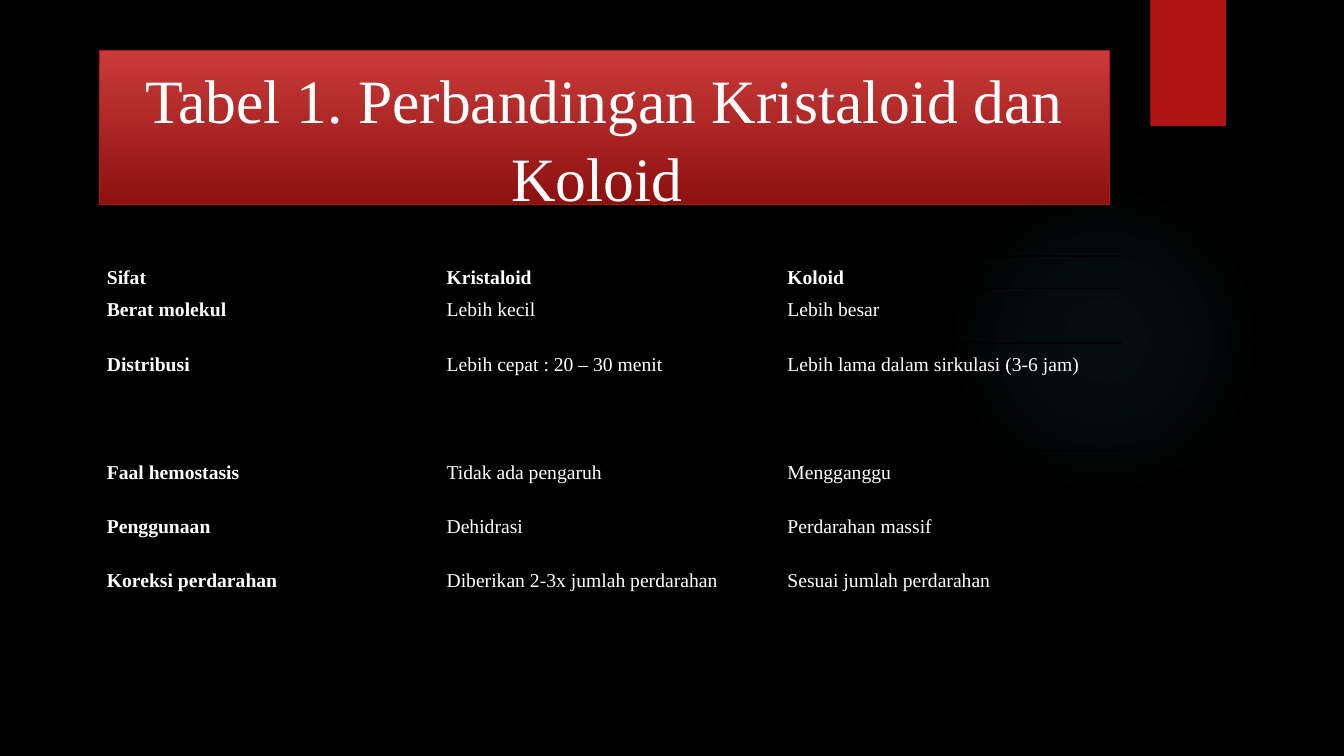
from lxml import etree
from pptx import Presentation
from pptx.dml.color import RGBColor
from pptx.enum.shapes import MSO_SHAPE
from pptx.enum.text import MSO_ANCHOR, PP_ALIGN
from pptx.oxml.ns import qn
from pptx.util import Inches, Pt

RECT, OVAL = MSO_SHAPE.RECTANGLE, MSO_SHAPE.OVAL
TOP = MSO_ANCHOR.TOP
CENTER, JUSTIFY = PP_ALIGN.CENTER, PP_ALIGN.JUSTIFY
FONT = "Times New Roman"
BLACK, WHITE, RED = "000000", "FFFFFF", "B01513"
GLOW_STOPS = [(0, 7), (36, 6), (69, 0)]
COL_WIDTHS = [3.37, 3.38, 3.38]
ROW_HEIGHTS = [0.32, 0.54, 1.07, 0.54, 0.54, 1.07, 0.54]
ROWS = [
    ("Sifat", "Kristaloid", "Koloid"),
    ("Berat molekul", "Lebih kecil", "Lebih besar"),
    ("Distribusi", "Lebih cepat : 20 – 30 menit", "Lebih lama dalam sirkulasi (3-6 jam)"),
    ("Faal hemostasis", "Tidak ada pengaruh", "Mengganggu"),
    ("Penggunaan", "Dehidrasi", "Perdarahan massif"),
    ("Koreksi perdarahan", "Diberikan 2-3x jumlah perdarahan", "Sesuai jumlah perdarahan"),
    ("", "", ""),
]


def rgb(color):
    """Turn a hex string into a colour."""
    return RGBColor.from_string(color)


def add_solid(parent, color):
    """Append a solid fill and return its colour element."""
    solid = etree.SubElement(parent, qn("a:solidFill"))
    return etree.SubElement(solid, qn("a:srgbClr"), val=color)


def style_text(p, size, align, spacing, bold=False):
    """Format a paragraph and its runs."""
    p.alignment = align
    p.line_spacing = spacing
    for r in p.runs:
        r.font.name = FONT
        r.font.size = Pt(size)
        r.font.bold = bold
        r.font.color.rgb = rgb(WHITE)


def add_block(slide, kind, x, y, w, h):
    """Add a shape without shadow or outline."""
    s = slide.shapes.add_shape(kind, Inches(x), Inches(y), Inches(w), Inches(h))
    s.shadow.inherit = False
    s.line.fill.background()
    return s


def add_glow(slide, x, y, size, color):
    """Add a faint circle that fades towards its rim."""
    s = add_block(slide, OVAL, x, y, size, size)
    s.fill.background()
    grad = etree.Element(qn("a:gradFill"))
    stops = etree.SubElement(grad, qn("a:gsLst"))
    for pos, alpha in GLOW_STOPS:
        stop = etree.SubElement(stops, qn("a:gs"), pos=str(pos * 1000))
        etree.SubElement(add_solid_color(stop, color), qn("a:alpha"), val=str(alpha * 1000))
    radial = etree.SubElement(grad, qn("a:path"), path="circle")
    etree.SubElement(radial, qn("a:fillToRect"), l="50000", t="50000", r="50000", b="50000")
    spPr = s.element.spPr
    spPr.replace(spPr.find(qn("a:noFill")), grad)


def add_solid_color(parent, color):
    """Append a bare colour element."""
    return etree.SubElement(parent, qn("a:srgbClr"), val=color)


def add_title(slide, text):
    """Add the title on its red gradient banner."""
    s = add_block(slide, RECT, 0.99, 0.5, 10.01, 1.53)
    s.fill.gradient()
    s.fill.gradient_angle = 270
    for stop, color, pos in zip(s.fill.gradient_stops, ("C93B3A", "8D110F"), (0, 1)):
        stop.color.rgb = rgb(color)
        stop.position = pos
    s.line.color.rgb = rgb(RED)
    s.line.width = Pt(0.75)
    tf = s.text_frame
    tf.word_wrap = True
    tf.vertical_anchor = TOP
    tf.margin_top = Inches(0.08)
    tf.text = text
    style_text(tf.paragraphs[0], 44, CENTER, 1.05)


def style_cell(cell):
    """Clear a cell's fill and rule it above and below in black."""
    cell.margin_left = cell.margin_right = Inches(0.07)
    cell.margin_top = cell.margin_bottom = 0
    tcPr = cell._tc.get_or_add_tcPr()
    for side in "LRTB":
        ln = etree.SubElement(tcPr, qn(f"a:ln{side}"), w=str(Pt(1)))
        if side in "TB":
            add_solid(ln, BLACK)
        else:
            etree.SubElement(ln, qn("a:noFill"))
    cell.fill.background()


def add_comparison(slide):
    """Add the comparison table."""
    frame = slide.shapes.add_table(
        len(ROWS), len(COL_WIDTHS), Inches(0.99), Inches(2.54),
        Inches(sum(COL_WIDTHS)), Inches(sum(ROW_HEIGHTS)))
    table = frame.table
    table.first_row = table.horz_banding = False
    for column, width in zip(table.columns, COL_WIDTHS):
        column.width = Inches(width)
    for i, (height, texts) in enumerate(zip(ROW_HEIGHTS, ROWS)):
        table.rows[i].height = Inches(height)
        for j, text in enumerate(texts):
            cell = table.cell(i, j)
            style_cell(cell)
            if text:
                cell.text = text
                style_text(cell.text_frame.paragraphs[0], 14, JUSTIFY, 1.5, i == 0 or j == 0)
    last = len(ROWS) - 1
    table.cell(last, 1).merge(table.cell(last, 2))


def main():
    """Build and save the slide."""
    prs = Presentation()
    prs.slide_width, prs.slide_height = Inches(13.33), Inches(7.5)
    slide = prs.slides.add_slide(prs.slide_layouts[6])
    slide.background.fill.solid()
    slide.background.fill.fore_color.rgb = rgb(BLACK)
    add_glow(slide, 9.41, 1.83, 3.08, "50B9C1")
    tab = add_block(slide, RECT, 11.41, 0, 0.75, 1.25)
    tab.fill.solid()
    tab.fill.fore_color.rgb = rgb(RED)
    add_title(slide, "Tabel 1. Perbandingan Kristaloid dan Koloid ")
    add_comparison(slide)
    prs.save("out.pptx")


if __name__ == "__main__":
    main()
